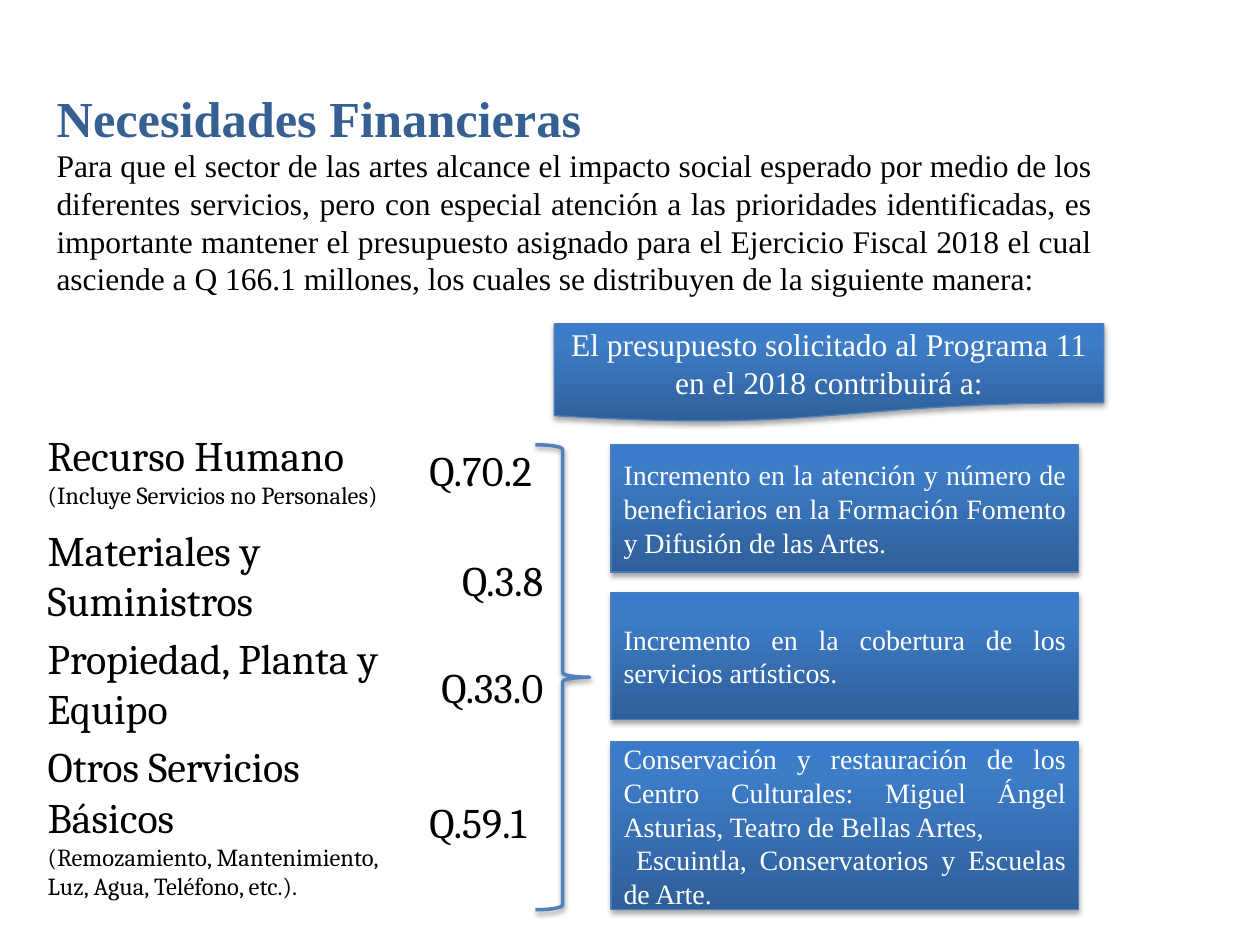
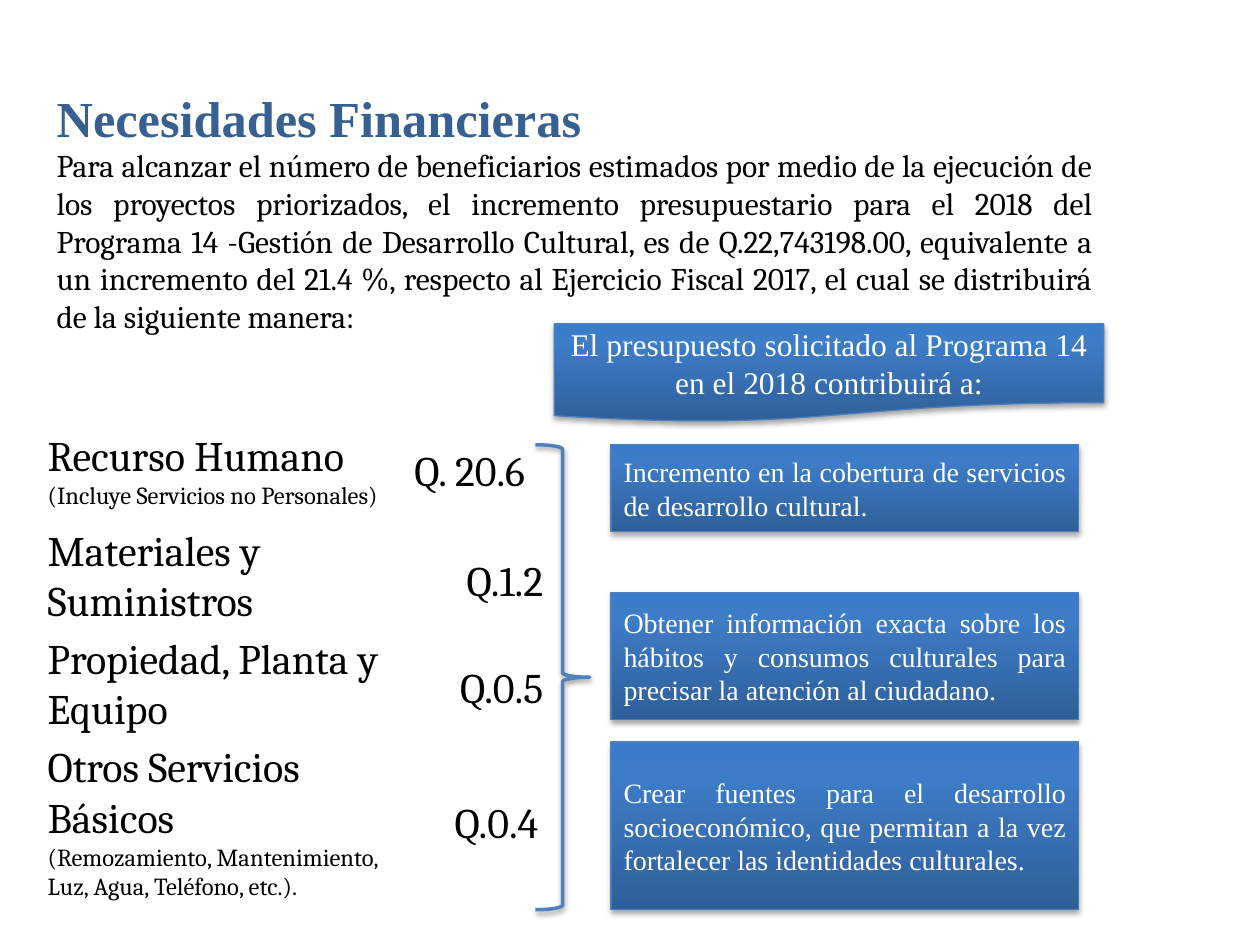
from copy import deepcopy

from lxml.etree import SubElement
from pptx import Presentation
from pptx.dml.color import RGBColor
from pptx.enum.shapes import MSO_SHAPE
from pptx.enum.text import MSO_ANCHOR, MSO_AUTO_SIZE, PP_ALIGN
from pptx.oxml.ns import qn
from pptx.util import Inches, Pt

SERIF, CAMBRIA = "Times New Roman", "Cambria"
BLACK, WHITE, TITLE_BLUE = "000000", "FFFFFF", "376092"
BRACE_BLUE, PANEL_EDGE = "4F81BD", "4B7EBC"
PANEL_STOPS = [(0, "2F5F99"), (0.8, "3D7CC7"), (1, "3A7CCB")]

# Each expense: top, width, paragraphs as (text, size)
EXPENSES = [
    (3.36, 2.91, [("Recurso Humano", 24), ("(Incluye Servicios no Personales)", 14)]),
    (4.11, 3.15, [("Materiales y Suministros", 24)]),
    (4.97, 3.15, [("Propiedad, Planta y Equipo", 24)]),
    (5.83, 3.81, [("Otros Servicios\vBásicos", 24),
                  ("(Remozamiento, Mantenimiento,\vLuz, Agua, Teléfono, etc.).", 14)]),
]
AMOUNT_TOPS = [3.48, 4.35, 5.2, 6.27]
GOAL_TOPS = [3.53, 4.7, 5.89]

PROGRAMS = [
    {
        "number": 11,
        "intro": "Para que el sector de las artes alcance el impacto social esperado por medio "
                 "de los diferentes servicios, pero con especial atención a las prioridades "
                 "identificadas, es importante mantener el presupuesto asignado para el "
                 "Ejercicio Fiscal 2018 el cual asciende a Q 166.1 millones, los cuales se "
                 "distribuyen de la siguiente manera:",
        "intro_font": SERIF,
        "intro_height": 1.31,
        # Each amount: text, left, width, alignment
        "amounts": [("Q.70.2", 3.31, 1.14, PP_ALIGN.LEFT), ("Q.3.8", 3.31, 1.1, PP_ALIGN.RIGHT),
                    ("Q.33.0", 3.19, 1.22, PP_ALIGN.RIGHT), ("Q.59.1", 3.31, 1.14, PP_ALIGN.LEFT)],
        # Each goal: height, paragraphs
        "goals": [
            (1.01, ["Incremento en la atención y número de beneficiarios en la Formación "
                    "Fomento y Difusión de las Artes."]),
            (1.01, ["Incremento en la cobertura de los servicios artísticos."]),
            (1.33, ["Conservación y restauración de los Centro Culturales: Miguel Ángel "
                    "Asturias, Teatro de Bellas Artes,",
                    "Escuintla, Conservatorios y Escuelas de Arte."]),
        ],
    },
    {
        "number": 14,
        "intro": "Para alcanzar el número de beneficiarios estimados por medio de la ejecución "
                 "de los proyectos priorizados, el incremento presupuestario para el 2018 del "
                 "Programa 14 -Gestión de Desarrollo Cultural, es de Q.22,743198.00, "
                 "equivalente a un incremento del 21.4 %, respecto al Ejercicio Fiscal 2017, "
                 "el cual se distribuirá de la siguiente manera:",
        "intro_font": CAMBRIA,
        "intro_height": 1.62,
        "amounts": [("Q. 20.6", 3.19, 1.26, PP_ALIGN.LEFT), ("Q.1.2", 3.31, 1.1, PP_ALIGN.RIGHT),
                    ("Q.0.5", 3.19, 1.22, PP_ALIGN.RIGHT), ("Q.0.4", 3.51, 1.14, PP_ALIGN.LEFT)],
        "goals": [
            (0.69, ["Incremento en la cobertura de servicios de desarrollo cultural."]),
            (1.01, ["Obtener información exacta sobre los hábitos y consumos culturales para "
                    "precisar la atención al ciudadano."]),
            (1.33, ["Crear fuentes para el desarrollo socioeconómico, que permitan a la vez "
                    "fortalecer las identidades culturales."]),
        ],
    },
]


def color(hex_code):
    return RGBColor.from_string(hex_code)


def place(shape, left, top, width, height):
    shape.left, shape.top = Inches(left), Inches(top)
    shape.width, shape.height = Inches(width), Inches(height)


def write(frame, lines, font, hex_code, align=PP_ALIGN.LEFT, bold=False):
    """Fill a text frame with one paragraph for each (text, size)."""
    frame.word_wrap = True
    for index, (text, size) in enumerate(lines):
        paragraph = frame.add_paragraph() if index else frame.paragraphs[0]
        paragraph.text = text
        paragraph.alignment = align
        paragraph.font.name = font
        paragraph.font.size = Pt(size)
        paragraph.font.bold = bold
        paragraph.font.color.rgb = color(hex_code)


def drop_shadow(shape, distance, opacity):
    shape.shadow.inherit = False
    effects = shape._element.spPr.find(qn("a:effectLst"))
    shadow = SubElement(effects, qn("a:outerShdw"), blurRad=str(Pt(3.1)), dist=str(Pt(distance)),
                        dir="5400000", rotWithShape="0")
    black = SubElement(shadow, qn("a:srgbClr"), val=BLACK)
    SubElement(black, qn("a:alpha"), val=str(opacity * 1000))


def panel_gradient(shape):
    shape.fill.gradient()
    shape.fill.gradient_angle = 90
    stop_list = shape._element.spPr.find(".//" + qn("a:gsLst"))
    stop_list.append(deepcopy(stop_list[-1]))
    for stop, (position, hex_code) in zip(shape.fill.gradient_stops, PANEL_STOPS):
        stop.position = position
        stop.color.rgb = color(hex_code)


class BudgetDeck:
    def __init__(self):
        self.prs = Presentation()
        self.prs.slide_width, self.prs.slide_height = Inches(10), Inches(7.5)
        self.slide = None

    def start_slide(self, title):
        self.slide = self.prs.slides.add_slide(self.prs.slide_layouts[5])
        heading = self.slide.shapes.title
        place(heading, 0.35, 0.63, 4.81, 0.6)
        heading.text_frame.auto_size = MSO_AUTO_SIZE.NONE
        heading.text_frame.vertical_anchor = MSO_ANCHOR.MIDDLE
        write(heading.text_frame, [(title, 28.8)], SERIF, TITLE_BLUE, bold=True)

    def text(self, box, lines, font=CAMBRIA, align=PP_ALIGN.LEFT):
        frame = self.slide.shapes.add_textbox(*map(Inches, box)).text_frame
        write(frame, lines, font, BLACK, align)
        frame.auto_size = MSO_AUTO_SIZE.SHAPE_TO_FIT_TEXT

    def panel(self, preset, box, lines, align):
        panel = self.slide.shapes.add_shape(preset, *map(Inches, box))
        panel_gradient(panel)
        panel.line.color.rgb = color(PANEL_EDGE)
        panel.line.width = Pt(0.75)
        drop_shadow(panel, 1.8, 35)
        panel.text_frame.vertical_anchor = MSO_ANCHOR.MIDDLE
        write(panel.text_frame, lines, SERIF, WHITE, align)
        for continuation in panel.text_frame.paragraphs[1:]:
            continuation._p.get_or_add_pPr().set("indent", str(Inches(0.1)))

    def brace(self, box):
        brace = self.slide.shapes.add_shape(MSO_SHAPE.RIGHT_BRACE, *map(Inches, box))
        brace.fill.background()
        brace.line.color.rgb = color(BRACE_BLUE)
        brace.line.width = Pt(2)
        drop_shadow(brace, 1.6, 38)

    def program_slide(self, program):
        self.start_slide("Necesidades Financieras")
        banner = f"El presupuesto solicitado al Programa {program['number']} en el 2018 contribuirá a:"
        self.panel(MSO_SHAPE.FLOWCHART_DOCUMENT, (4.4, 2.57, 4.36, 0.78), [(banner, 18)],
                   PP_ALIGN.CENTER)
        self.brace((4.25, 3.53, 0.43, 3.69))
        for top, (height, goal) in zip(GOAL_TOPS, program["goals"]):
            self.panel(MSO_SHAPE.RECTANGLE, (4.85, top, 3.71, height),
                       [(text, 16) for text in goal], PP_ALIGN.JUSTIFY)
        self.text((0.35, 1.11, 8.42, program["intro_height"]), [(program["intro"], 18)],
                  program["intro_font"], PP_ALIGN.JUSTIFY)
        for (top, width, lines), amount_top, (amount, left, amount_width, align) in zip(
                EXPENSES, AMOUNT_TOPS, program["amounts"]):
            height = sum(size * (1 + text.count("\v")) for text, size in lines) / 60 + 0.1
            self.text((0.28, top, width, height), lines)
            self.text((left, amount_top, amount_width, 0.5), [(amount, 24)], align=align)


def main():
    deck = BudgetDeck()
    for program in PROGRAMS:
        deck.program_slide(program)
    deck.prs.save("out.pptx")


if __name__ == "__main__":
    main()
